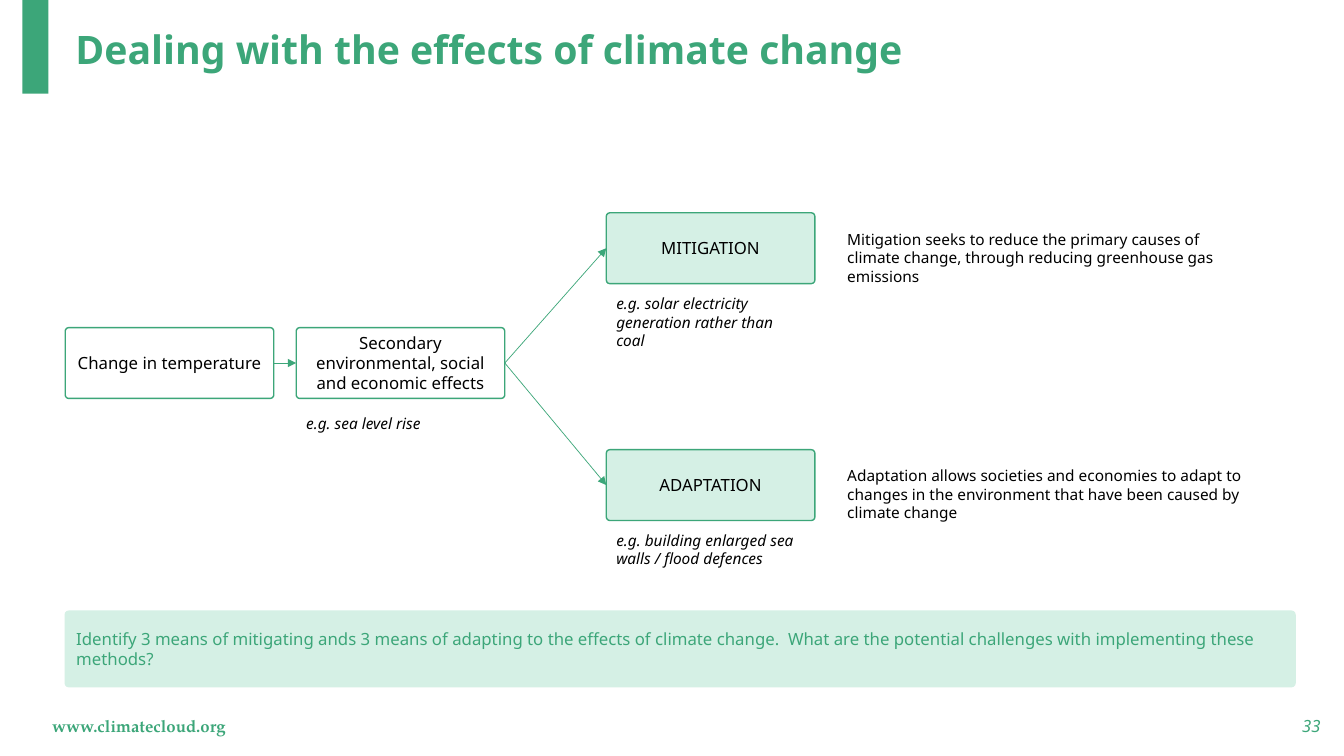
from lxml.etree import SubElement
from pptx import Presentation
from pptx.dml.color import RGBColor
from pptx.enum.shapes import MSO_CONNECTOR, MSO_SHAPE
from pptx.enum.text import MSO_ANCHOR, PP_ALIGN
from pptx.oxml.ns import qn
from pptx.util import Pt

COLORS = {"green": "3CA679", "mint": "D5F0E5", "black": "000000"}
SANS, SERIF = "Noto Sans", "TeX Gyre Pagella"
STEP_WIDTH, STEP_HEIGHT = 149, 50.6


def color(name):
    """Return the named palette colour."""
    return RGBColor.from_string(COLORS[name])


def write(holder, text, size, ink="black", font=SANS, bold=False, italic=False,
          align=PP_ALIGN.LEFT, anchor=MSO_ANCHOR.MIDDLE):
    """Put one styled paragraph into a shape and return it."""
    frame = holder.text_frame
    frame.word_wrap = True
    frame.vertical_anchor = anchor
    paragraph = frame.paragraphs[0]
    paragraph.text = text
    paragraph.alignment = align
    paragraph.font.name = font
    paragraph.font.size = Pt(size)
    paragraph.font.bold = bold
    paragraph.font.italic = italic
    paragraph.font.color.rgb = color(ink)
    return paragraph


def add_label(slide, box, text, size, **style):
    """Add a text box with one paragraph."""
    return write(slide.shapes.add_textbox(*map(Pt, box)), text, size, **style)


def add_panel(slide, box, fill=None, line=None, kind=MSO_SHAPE.ROUNDED_RECTANGLE):
    """Add a flat panel with optional fill and outline."""
    panel = slide.shapes.add_shape(kind, *map(Pt, box))
    panel.shadow.inherit = False
    if kind == MSO_SHAPE.ROUNDED_RECTANGLE:
        panel.adjustments[0] = 0.05
    if fill:
        panel.fill.solid()
        panel.fill.fore_color.rgb = color(fill)
    else:
        panel.fill.background()
    if line:
        panel.line.color.rgb = color(line)
        panel.line.width = Pt(1)
    else:
        panel.line.fill.background()
    return panel


def add_step(slide, left, top, title, example=None, example_gap=4, fill=None):
    """Add a diagram step with an optional example below it."""
    step = add_panel(slide, (left, top, STEP_WIDTH, STEP_HEIGHT), fill, "green")
    write(step, title, 12, align=PP_ALIGN.CENTER)
    if example:
        add_label(slide, (left, top + STEP_HEIGHT + example_gap, 142, 47.5),
                  example, 11, italic=True, anchor=MSO_ANCHOR.TOP)
    return step


def add_arrow(slide, cause, outcome):
    """Join the right side of one step to the left side of another."""
    arrow = slide.shapes.add_connector(MSO_CONNECTOR.STRAIGHT, 0, 0, 0, 0)
    arrow.begin_connect(cause, 3)
    arrow.end_connect(outcome, 1)
    arrow.line.color.rgb = color("green")
    arrow.line.width = Pt(0.5)
    SubElement(arrow.line._get_or_add_ln(), qn("a:tailEnd"), type="triangle")
    SubElement(arrow._element.spPr, qn("a:effectLst"))


def add_header(slide, left, top, width, height):
    """Add the accent bar and the slide title."""
    add_panel(slide, (left, top, 18.7, height), "green", kind=MSO_SHAPE.RECTANGLE)
    title = add_label(slide, (left + 30.8, top + 9.4, width - 30.8, 54.7),
                      "Dealing with the effects of climate change", 28,
                      ink="green", bold=True)
    title.line_spacing = 0.9


def add_diagram(slide, left, top):
    """Add the flow from temperature change to the two responses."""
    middle = top + 82
    temperature = add_step(slide, left, middle, "Change in temperature")
    effects = add_step(slide, left + 165, middle,
                       "Secondary environmental, social and economic effects",
                       "e.g. sea level rise", example_gap=7.7)
    add_arrow(slide, temperature, effects)
    responses = [
        ("MITIGATION", "e.g. solar electricity generation rather than coal",
         "Mitigation seeks to reduce the primary causes of climate change, "
         "through reducing greenhouse gas emissions"),
        ("ADAPTATION", "e.g. building enlarged sea walls / flood defences",
         "Adaptation allows societies and economies to adapt to changes in the "
         "environment that have been caused by climate change"),
    ]
    for index, (name, example, meaning) in enumerate(responses):
        response_top = top + index * 169.2
        response = add_step(slide, left + 386.5, response_top, name, example, fill="mint")
        add_arrow(slide, effects, response)
        add_label(slide, (left + 551.5, response_top + 8.5, 304.5, 47.5), meaning, 11,
                  anchor=MSO_ANCHOR.TOP)


def add_question(slide, *box):
    """Add the discussion question in its tinted band."""
    write(add_panel(slide, box, "mint", "mint"),
          "Identify 3 means of mitigating ands 3 means of adapting to the effects of "
          "climate change.  What are the potential challenges with implementing these "
          "methods?", 12, ink="green")


def add_footer(slide, left, top, width, height):
    """Add the web address and the slide number."""
    add_label(slide, (left, top, 324, height), "www.climatecloud.org", 12,
              ink="green", font=SERIF, bold=True)
    add_label(slide, (left + width - 216, top, 216, height), "33", 12,
              ink="green", italic=True, align=PP_ALIGN.RIGHT)


def main():
    """Build and save the slide."""
    deck = Presentation()
    deck.slide_width, deck.slide_height = Pt(960), Pt(540)
    slide = deck.slides.add_slide(deck.slide_layouts[6])
    add_header(slide, 16, 0, 803.5, 67)
    add_diagram(slide, 46.6, 152)
    add_question(slide, 46.6, 436.5, 878.5, 54)
    add_footer(slide, 30.2, 504, 920.2, 28.8)
    deck.save("out.pptx")


if __name__ == "__main__":
    main()
